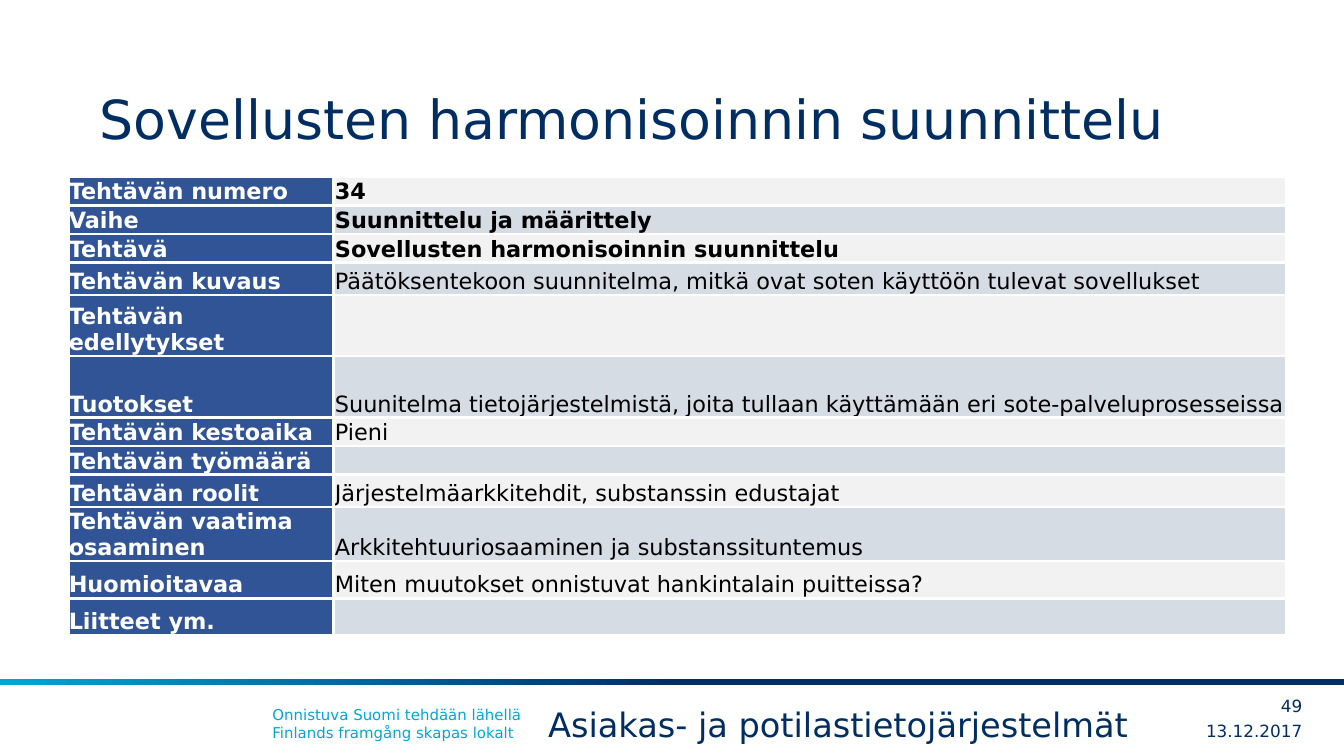
from collections import namedtuple
from dataclasses import dataclass

from lxml.etree import SubElement
from pptx import Presentation
from pptx.dml.color import RGBColor
from pptx.enum.shapes import MSO_SHAPE as Shape
from pptx.enum.text import MSO_ANCHOR as Anchor, PP_ALIGN as Align
from pptx.oxml import parse_xml
from pptx.oxml.ns import nsdecls, qn
from pptx.util import Cm, Pt

Box = namedtuple("Box", "left top width height")


@dataclass(frozen=True)
class Theme:
    font: str = "DejaVu Sans"
    navy: str = "002E63"
    cyan: str = "00A6D6"
    label_fill: str = "305496"
    row_fills: tuple = ("F2F2F2", "D6DCE4")
    white: str = "FFFFFF"
    black: str = "000000"
    title_size: float = 28.8
    subject_size: float = 18
    table_size: float = 12
    small_size: float = 9
    slogan_size: float = 8
    border_width: float = 1.5


THEME = Theme()

# Label, value, row height in cm
TASK_ROWS = [
    ("Tehtävän numero", "34", 0.5),
    ("Vaihe", "Suunnittelu ja määrittely", 0.5),
    ("Tehtävä", "Sovellusten harmonisoinnin suunnittelu", 0.5),
    ("Tehtävän kuvaus",
     "Päätöksentekoon suunnitelma, mitkä ovat soten käyttöön tulevat sovellukset", 0.61),
    ("Tehtävän edellytykset", "", 1.16),
    ("Tuotokset",
     "Suunitelma tietojärjestelmistä, joita tullaan käyttämään eri sote-palveluprosesseissa", 1.16),
    ("Tehtävän kestoaika", "Pieni", 0.5),
    ("Tehtävän työmäärä", "", 0.5),
    ("Tehtävän roolit", "Järjestelmäarkkitehdit, substanssin edustajat", 0.61),
    ("Tehtävän vaatima osaaminen", "Arkkitehtuuriosaaminen ja substanssituntemus", 0.99),
    ("Huomioitavaa", "Miten muutokset onnistuvat hankintalain puitteissa?", 0.71),
    ("Liitteet ym.", "", 0.69),
]
BOLD_VALUES = 3  # the first rows identify the task


def to_cm(box):
    return [Cm(length) for length in box]


def set_margins(target, left, top, right, bottom):
    target.margin_left, target.margin_top = Cm(left), Cm(top)
    target.margin_right, target.margin_bottom = Cm(right), Cm(bottom)


def add_span(para, text, size, color, bold=False):
    span = para.add_run()
    span.text = text
    span.font.name = THEME.font
    span.font.size = Pt(size)
    span.font.bold = bold
    span.font.color.rgb = RGBColor.from_string(color)


def add_text(page, box, lines, size, color, align=Align.LEFT, wrap=True):
    frame = page.shapes.add_textbox(*to_cm(box)).text_frame
    frame.word_wrap = wrap
    para = frame.paragraphs[0]
    para.alignment = align
    for index, line in enumerate(lines):
        if index:
            para.add_line_break()
        add_span(para, line, size, color)
    return frame


def place_title(page, box, text):
    title = page.shapes.title
    title.left, title.top, title.width, title.height = to_cm(box)
    frame = title.text_frame
    frame.word_wrap = True
    frame.vertical_anchor = Anchor.BOTTOM
    set_margins(frame, 0, 0.13, 0, 0.13)
    para = frame.paragraphs[0]
    para.alignment = Align.LEFT
    add_span(para, text, THEME.title_size, THEME.navy)


def add_borders(cell):
    properties = cell._tc.get_or_add_tcPr()
    for index, side in enumerate(("lnL", "lnR", "lnT", "lnB")):
        properties.insert(index, parse_xml(
            f'<a:{side} {nsdecls("a")} w="{Pt(THEME.border_width)}"><a:solidFill>'
            f'<a:srgbClr val="{THEME.white}"/></a:solidFill></a:{side}>'))


def fill_cell(cell, text, fill, color, bold, margins):
    add_borders(cell)
    cell.fill.solid()
    cell.fill.fore_color.rgb = RGBColor.from_string(fill)
    cell.vertical_anchor = Anchor.BOTTOM
    set_margins(cell, *margins)
    para = cell.text_frame.paragraphs[0]
    if text:
        add_span(para, text, THEME.table_size, color, bold)
    else:  # keep an empty cell from stretching its row
        SubElement(para._p, qn("a:endParaRPr"), sz=str(int(THEME.table_size * 100)))


def add_task_table(page, box, label_width):
    table = page.shapes.add_table(len(TASK_ROWS), 2, *to_cm(box)).table
    table.first_row = table.horz_banding = False
    table.columns[0].width = Cm(label_width)
    table.columns[1].width = Cm(box.width - label_width)
    for index, (label, value, height) in enumerate(TASK_ROWS):
        table.rows[index].height = Cm(height)
        fill_cell(table.cell(index, 0), label, THEME.label_fill, THEME.white,
                  True, (0, 0, 0, 0))
        fill_cell(table.cell(index, 1), value, THEME.row_fills[index % 2], THEME.black,
                  index < BOLD_VALUES, (0.03, 0.03, 0.03, 0))


def add_footer(page, box):
    # Gradient rule across the page
    rule = page.shapes.add_shape(
        Shape.RECTANGLE, *to_cm(Box(box.left, box.top, box.width, 0.13)))
    rule.shadow.inherit = False
    rule.line.fill.background()
    rule.fill.gradient()
    rule.fill.gradient_angle = 180
    stops = ((0.5, THEME.navy), (1, THEME.cyan))
    for stop, (position, color) in zip(rule.fill.gradient_stops, stops):
        stop.position = position
        stop.color.rgb = RGBColor.from_string(color)

    # Slogan and subject
    add_text(page, Box(box.left + 4.9, box.top + 0.38, 16.61, 0.94),
             ["Onnistuva Suomi tehdään lähellä", "Finlands framgång skapas lokalt"],
             THEME.slogan_size, THEME.cyan)
    add_text(page, Box(box.left + 10.11, box.top + 0.36, 11.76, 1.02),
             ["Asiakas- ja potilastietojärjestelmät"],
             THEME.subject_size, THEME.navy, wrap=False)

    # Page number above the date, both flush right
    right = box.left + box.width - 0.79
    for text, width, offset in (("49", 1.09, 0.23), ("13.12.2017", 2.51, 0.71)):
        frame = add_text(page, Box(right - width, box.top + offset, width, 0.56),
                         [text], THEME.small_size, THEME.navy, Align.RIGHT)
        frame.vertical_anchor = Anchor.MIDDLE
        set_margins(frame, 0, 0, 0, 0)


def main():
    deck = Presentation()
    deck.slide_width, deck.slide_height = Cm(25.4), Cm(14.28)
    page = deck.slides.add_slide(deck.slide_layouts[5])
    add_footer(page, Box(0, 12.82, 25.4, 1.46))
    place_title(page, Box(1.88, 0.58, 21.62, 2.39), "Sovellusten harmonisoinnin suunnittelu")
    add_task_table(page, Box(1.3, 3.34, 23.01, 8.43), 5)
    deck.save("out.pptx")


if __name__ == "__main__":
    main()
